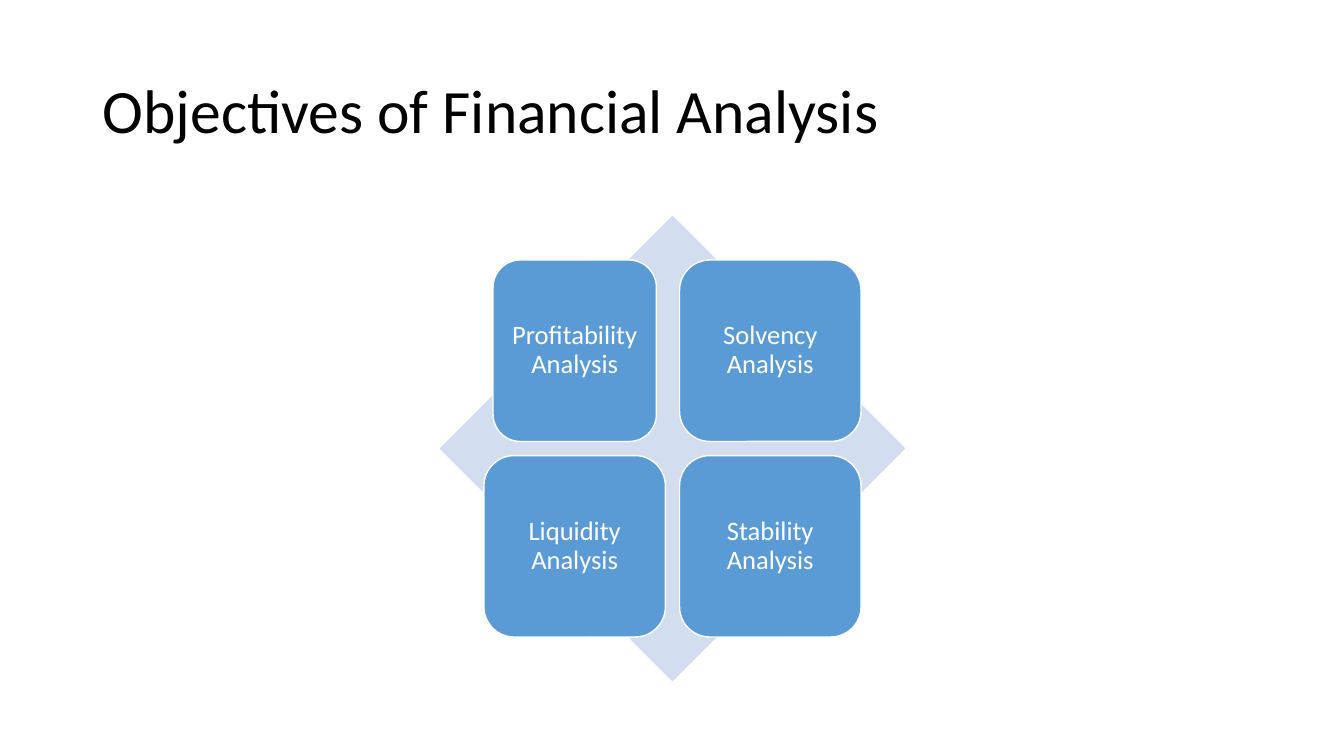
"""Build the slide on the four objectives of financial analysis."""
from pptx import Presentation
from pptx.dml.color import RGBColor
from pptx.enum.shapes import MSO_SHAPE
from pptx.enum.text import MSO_ANCHOR, PP_ALIGN
from pptx.util import Inches, Pt

DIAMOND, ROUNDED = MSO_SHAPE.DIAMOND, MSO_SHAPE.ROUNDED_RECTANGLE
MIDDLE = MSO_ANCHOR.MIDDLE
LEFT, CENTER = PP_ALIGN.LEFT, PP_ALIGN.CENTER

COLORS = {"title": "000000", "diamond": "D2DEEF", "tile": "5B9BD5", "white": "FFFFFF"}
TITLE_FONT = {"name": "Calibri", "size": Pt(44)}
TILE_FONT = {"name": "Calibri", "size": Pt(19)}
TILE_FRAME = {"word_wrap": True, "vertical_anchor": MIDDLE}
TILE_FRAME.update({f"margin_{side}": Inches(0.08) for side in ("left", "top", "right", "bottom")})

TILE_SIZE, TILE_STEP = 1.8, 1.94
GRID_LEFT, GRID_TOP = 4.8, 2.58
NARROW_TILE = 1.62
OBJECTIVES = [
    ["Profitability Analysis", "Solvency Analysis"],
    ["Liquidity Analysis", "Stability Analysis"],
]


def rgb(key):
    """Return the named colour."""
    return RGBColor.from_string(COLORS[key])


def apply(target, values):
    """Set each attribute in values on target."""
    for name, value in values.items():
        setattr(target, name, value)


def write(tf, text, font, color, align):
    """Write one formatted paragraph into a text frame."""
    p = tf.paragraphs[0]
    apply(p, {"alignment": align, "line_spacing": 0.9})
    r = p.add_run()
    r.text = text
    apply(r.font, font)
    r.font.color.rgb = rgb(color)


def add_title(s, text):
    """Place and fill the title placeholder."""
    sp = s.shapes.title
    apply(sp, {"left": Inches(0.92), "top": Inches(0.4),
               "width": Inches(11.5), "height": Inches(1.45)})
    apply(sp.text_frame, {"word_wrap": True, "vertical_anchor": MIDDLE})
    write(sp.text_frame, text, TITLE_FONT, "title", LEFT)


def add_filled(s, kind, box, color):
    """Add a flat filled shape without an outline."""
    sp = s.shapes.add_shape(kind, *map(Inches, box))
    sp.shadow.inherit = False
    sp.fill.solid()
    sp.fill.fore_color.rgb = rgb(color)
    sp.line.fill.background()
    return sp


def add_tile(s, box, text):
    """Add a rounded tile with a white outline and centred text."""
    sp = add_filled(s, ROUNDED, box, "tile")
    sp.line.color.rgb = rgb("white")
    sp.line.width = Pt(1)
    apply(sp.text_frame, TILE_FRAME)
    write(sp.text_frame, text, TILE_FONT, "white", CENTER)


def main():
    """Build and save the slide."""
    prs = Presentation()
    prs.slide_width, prs.slide_height = Inches(13.33), Inches(7.5)
    s = prs.slides.add_slide(prs.slide_layouts[5])
    add_title(s, "Objectives of Financial Analysis")
    add_filled(s, DIAMOND, (4.36, 2.14, 4.62, 4.62), "diamond")
    for row, labels in enumerate(OBJECTIVES):
        for col, label in enumerate(labels):
            width = NARROW_TILE if row == col == 0 else TILE_SIZE
            left = GRID_LEFT + col * TILE_STEP + (TILE_SIZE - width) / 2
            add_tile(s, (left, GRID_TOP + row * TILE_STEP, width, TILE_SIZE), label)
    prs.save("out.pptx")


if __name__ == "__main__":
    main()
